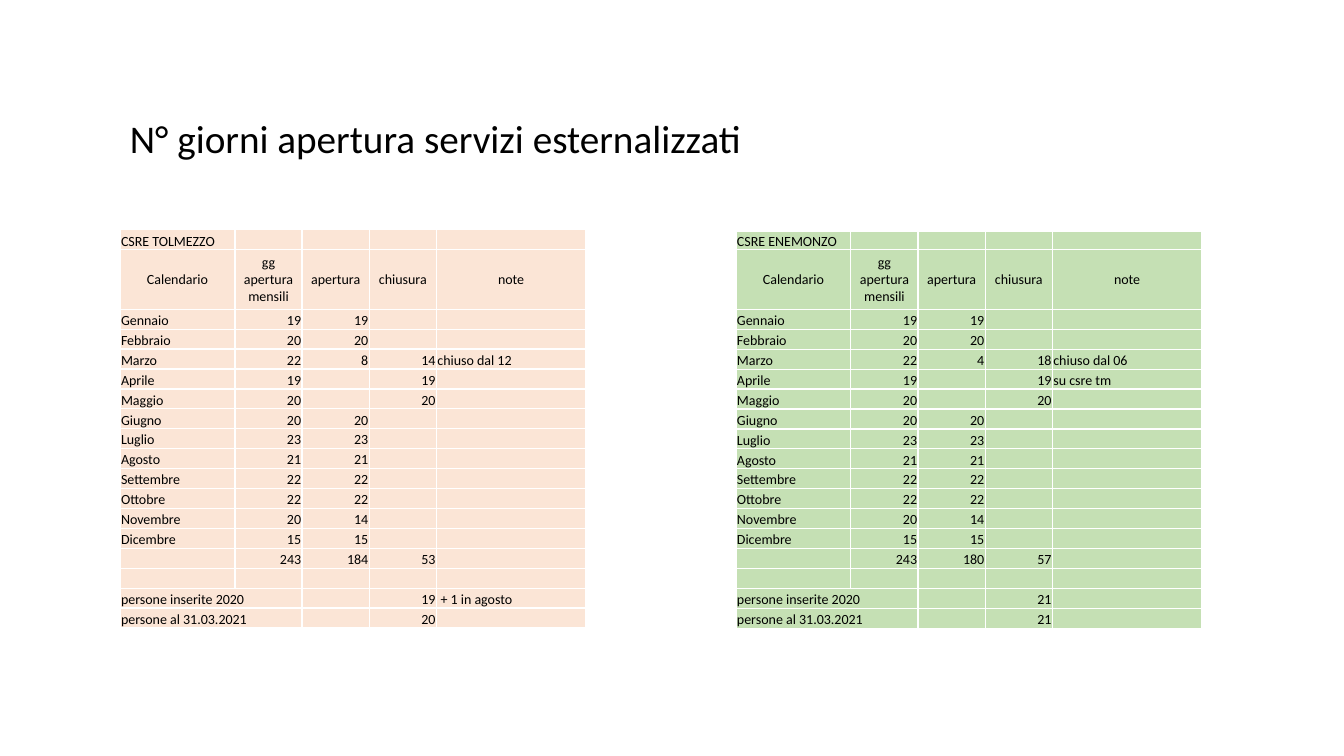
from dataclasses import dataclass

from lxml.etree import SubElement
from pptx import Presentation
from pptx.dml.color import RGBColor as Color
from pptx.enum.text import MSO_ANCHOR as Anchor, MSO_AUTO_SIZE as AutoSize, PP_ALIGN as Align
from pptx.oxml.ns import qn
from pptx.util import Inches, Pt


@dataclass(frozen=True)
class Theme:
    font: str = "Calibri"
    text: str = "000000"
    border: str = "FFFFFF"
    peach: str = "FBE5D6"
    green: str = "C5E0B4"
    title_size: int = 28
    cell_size: int = 10
    border_width: int = 1


HEADERS = ["Calendario", "gg apertura mensili", "apertura", "chiusura", "note"]
COLUMN_WIDTHS = [8.55, 5, 5, 5, 11.12]
HEADER_HEIGHT = 7.87
ROW_HEIGHT = 2.64
CELL_ALIGNS = [Align.LEFT, Align.RIGHT, Align.RIGHT, Align.RIGHT, Align.LEFT]
CELL_MARGINS = {
    "margin_left": Inches(0.01),
    "margin_right": Inches(0.01),
    "margin_top": Inches(0.01),
    "margin_bottom": 0,
}


def apply(target, values):
    for name, value in values.items():
        setattr(target, name, value)


def centre_rows(name, march, april_note, totals, added, present):
    return [
        [name, "", "", "", ""],
        HEADERS,
        ["Gennaio", "19", "19", "", ""],
        ["Febbraio", "20", "20", "", ""],
        ["Marzo", "22", *march],
        ["Aprile", "19", "", "19", april_note],
        ["Maggio", "20", "", "20", ""],
        ["Giugno", "20", "20", "", ""],
        ["Luglio", "23", "23", "", ""],
        ["Agosto", "21", "21", "", ""],
        ["Settembre", "22", "22", "", ""],
        ["Ottobre", "22", "22", "", ""],
        ["Novembre", "20", "14", "", ""],
        ["Dicembre", "15", "15", "", ""],
        ["", "243", *totals, ""],
        ["", "", "", "", ""],
        ["persone inserite 2020", "", "", *added],
        ["persone al 31.03.2021", "", "", present, ""],
    ]


class SlideBuilder:
    grid_columns = 100
    grid_rows = 100

    def __init__(self, deck, theme):
        self.theme = theme
        self.page = deck.slides.add_slide(deck.slide_layouts[6])
        self.column = deck.slide_width / self.grid_columns
        self.row = deck.slide_height / self.grid_rows

    def across(self, columns):
        return round(columns * self.column)

    def down(self, rows):
        return round(rows * self.row)

    def add_text(self, para, text, size):
        span = para.add_run()
        span.text = text
        apply(span.font, {"name": self.theme.font, "size": Pt(size)})
        span.font.color.rgb = Color.from_string(self.theme.text)

    def title(self, text, left, top, width, height):
        box = self.page.shapes.add_textbox(
            self.across(left), self.down(top), self.across(width), self.down(height)
        )
        apply(box.text_frame, {"word_wrap": True, "auto_size": AutoSize.SHAPE_TO_FIT_TEXT})
        self.add_text(box.text_frame.paragraphs[0], text, self.theme.title_size)

    def table(self, rows, left, top, first_height, fill):
        heights = [first_height, HEADER_HEIGHT] + [ROW_HEIGHT] * (len(rows) - 2)
        grid = self.page.shapes.add_table(
            len(rows), len(COLUMN_WIDTHS), self.across(left), self.down(top),
            self.across(sum(COLUMN_WIDTHS)), self.down(sum(heights)),
        ).table
        apply(grid, {"first_row": False, "horz_banding": False})
        for column, width in zip(grid.columns, COLUMN_WIDTHS):
            column.width = self.across(width)
        for row, height in zip(grid.rows, heights):
            row.height = self.down(height)
        for row, texts in zip(grid.rows, rows):
            is_header = texts is HEADERS
            for cell, text, align in zip(row.cells, texts, CELL_ALIGNS):
                self.cell(cell, text, Align.CENTER if is_header else align,
                          Anchor.MIDDLE if is_header else Anchor.BOTTOM, fill)
        for index in (len(rows) - 2, len(rows) - 1):
            grid.cell(index, 0).merge(grid.cell(index, 1))

    def cell(self, cell, text, align, anchor, fill):
        apply(cell, {**CELL_MARGINS, "vertical_anchor": anchor})
        self.borders(cell)
        cell.fill.solid()
        cell.fill.fore_color.rgb = Color.from_string(fill)
        para = cell.text_frame.paragraphs[0]
        para.alignment = align
        if text:
            self.add_text(para, text, self.theme.cell_size)
        else:
            SubElement(para._p, qn("a:endParaRPr"), sz=str(self.theme.cell_size * 100))

    def borders(self, cell):
        properties = cell._tc.get_or_add_tcPr()
        for side in ("L", "R", "T", "B"):
            line = SubElement(properties, qn(f"a:ln{side}"), w=str(Pt(self.theme.border_width)))
            paint = SubElement(line, qn("a:solidFill"))
            SubElement(paint, qn("a:srgbClr"), val=self.theme.border)


def main():
    deck = Presentation()
    apply(deck, {"slide_width": Inches(13.33), "slide_height": Inches(7.5)})
    theme = Theme()
    builder = SlideBuilder(deck, theme)
    tolmezzo = centre_rows("CSRE TOLMEZZO", ["8", "14", "chiuso dal 12"], "",
                           ["184", "53"], ["19", " + 1 in agosto"], "20")
    enemonzo = centre_rows("CSRE ENEMONZO", ["4", "18", "chiuso dal 06"], "su csre tm",
                           ["180", "57"], ["21", ""], "21")
    builder.table(tolmezzo, 8.93, 30.4, ROW_HEIGHT, theme.peach)
    builder.table(enemonzo, 54.76, 30.67, 2.37, theme.green)
    builder.title("N° giorni apertura servizi esternalizzati", 8.93, 14.53, 55.74, 7.6)
    deck.save("out.pptx")


if __name__ == "__main__":
    main()
